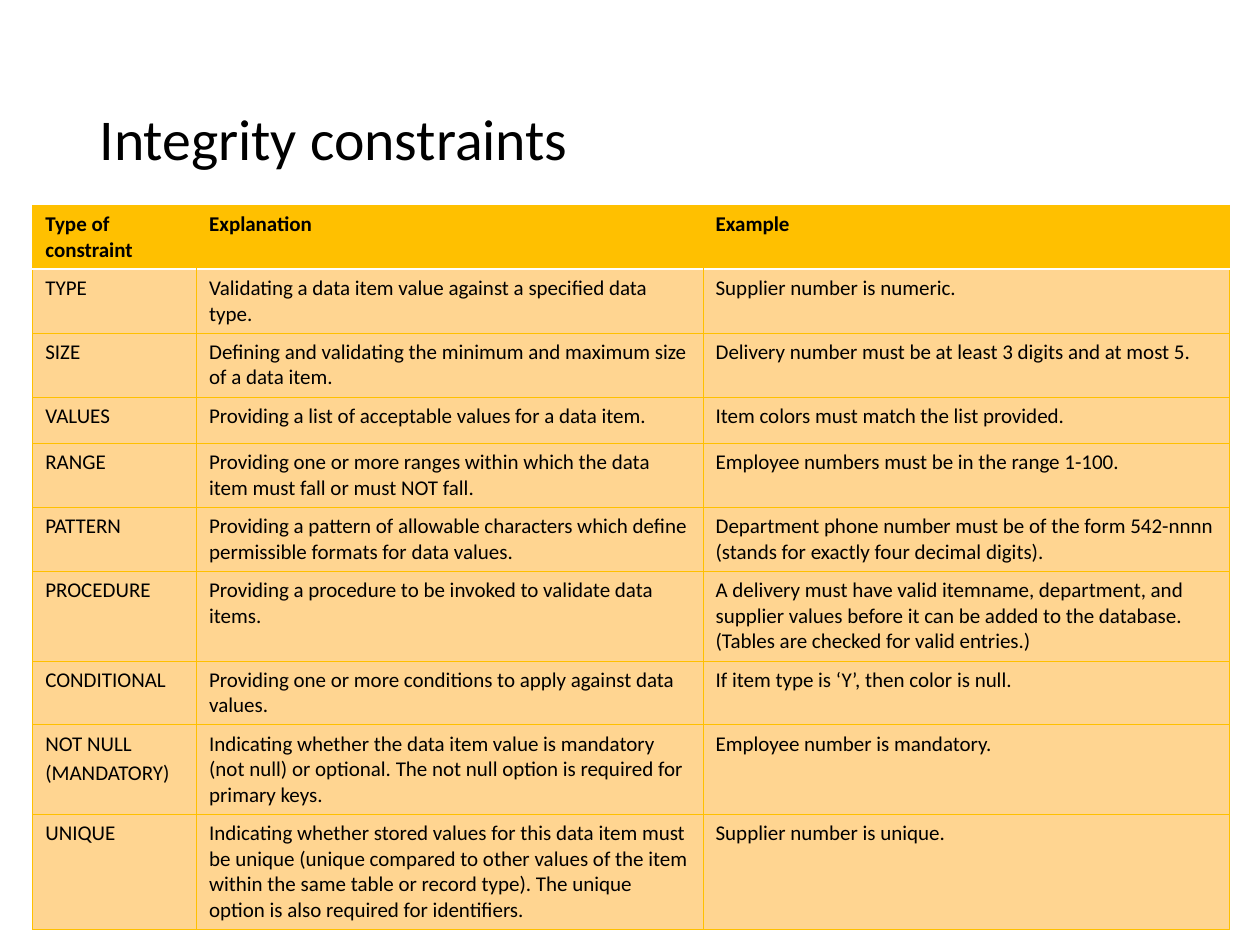
from lxml import etree
from pptx import Presentation, util as u
from pptx.dml.color import RGBColor
from pptx.enum import text
from pptx.oxml import ns

GOLD = RGBColor(0xFF, 0xC0, 0x00)
PEACH = RGBColor(0xFF, 0xD5, 0x91)
WHITE = RGBColor(0xFF, 0xFF, 0xFF)
BLACK = RGBColor(0, 0, 0)
FONT = "Calibri"

COLUMNS = [1.30, 4.02, 4.18]
ROWS = [0.48, 0.30, 0.44, 0.37, 0.44, 0.51, 0.64, 0.48, 0.60, 0.77]
CONSTRAINTS = [
    ("Type of constraint", "Explanation", "Example"),
    ("TYPE", "Validating a data item value against a specified data type.",
     "Supplier number is numeric."),
    ("SIZE", "Defining and validating the minimum and maximum size of a data item.",
     "Delivery number must be at least 3 digits and at most 5."),
    ("VALUES", "Providing a list of acceptable values for a data item.",
     "Item colors must match the list provided."),
    ("RANGE", "Providing one or more ranges within which the data item must fall "
     "or must NOT fall.",
     "Employee numbers must be in the range 1-100."),
    ("PATTERN", "Providing a pattern of allowable characters which define "
     "permissible formats for data values.",
     "Department phone number must be of the form 542-nnnn "
     "(stands for exactly four decimal digits)."),
    ("PROCEDURE", "Providing a procedure to be invoked to validate data items.",
     "A delivery must have valid itemname, department, and supplier values before "
     "it can be added to the database. (Tables are checked for valid entries.)"),
    ("CONDITIONAL", "Providing one or more conditions to apply against data values.",
     "If item type is ‘Y’, then color is null."),
    ("NOT NULL\n(MANDATORY)", "Indicating whether the data item value is mandatory "
     "(not null) or optional. The not null option is required for primary keys.",
     "Employee number is mandatory."),
    ("UNIQUE", "Indicating whether stored values for this data item must be unique "
     "(unique compared to other values of the item within the same table or record "
     "type). The unique option is also required for identifiers.",
     "Supplier number is unique."),
]


def format_para(para, size, bold=False):
    for span in para.runs:
        font = span.font
        font.name, font.size, font.bold = FONT, u.Pt(size), bold
        font.color.rgb = BLACK


def set_border(cell, side, color, width):
    """Draw one cell edge; no color means no line."""
    properties = cell._tc.get_or_add_tcPr()
    line = etree.SubElement(properties, ns.qn("a:ln" + side), w=str(u.Pt(width)))
    if color is None:
        etree.SubElement(line, ns.qn("a:noFill"))
    else:
        fill = etree.SubElement(line, ns.qn("a:solidFill"))
        etree.SubElement(fill, ns.qn("a:srgbClr"), val=str(color))


def format_cell(cell, row, column):
    header = row == 0
    last = len(COLUMNS) - 1
    # Edges come before the fill in the cell properties
    rule = (WHITE, 1)
    gold = (GOLD, 0.5)
    blank = (None, 0.5)
    set_border(cell, "L", *(blank if header and column > 0 else gold))
    set_border(cell, "R", *(blank if header and column < last else gold))
    set_border(cell, "T", *(rule if row == 1 else gold))
    set_border(cell, "B", *(rule if header else gold))
    cell.fill.solid()
    cell.fill.fore_color.rgb = GOLD if header else PEACH
    for para in cell.text_frame.paragraphs:
        para.space_before = u.Pt(2.4)
        format_para(para, 12, bold=header)


def place_title(page, left, top, width, height):
    title = page.shapes.title
    title.left, title.top, title.width, title.height = left, top, width, height
    frame = title.text_frame
    frame.text = "Integrity constraints"
    frame.vertical_anchor = text.MSO_ANCHOR.MIDDLE
    frame.word_wrap = True
    para = frame.paragraphs[0]
    para.alignment = text.PP_ALIGN.LEFT
    para.line_spacing = 0.9
    format_para(para, 33)


def place_table(page, left, top, width, height):
    table = page.shapes.add_table(len(ROWS), len(COLUMNS),
                                  left, top, width, height).table
    table.horz_banding = False
    for column, share in zip(table.columns, COLUMNS):
        column.width = int(width * share / sum(COLUMNS))
    for row, size in zip(table.rows, ROWS):
        row.height = u.Inches(size)
    for row, entries in enumerate(CONSTRAINTS):
        for column, entry in enumerate(entries):
            cell = table.cell(row, column)
            cell.text_frame.text = entry
            format_cell(cell, row, column)


def main():
    deck = Presentation()
    deck.slide_width, deck.slide_height = u.Inches(10), u.Inches(7.5)
    page = deck.slides.add_slide(deck.slide_layouts[5])
    page.background.fill.solid()
    page.background.fill.fore_color.rgb = WHITE
    place_title(page, *map(u.Inches, (0.69, 0.4, 8.62, 1.45)))
    place_table(page, *map(u.Inches, (0.26, 1.63, sum(COLUMNS), sum(ROWS))))
    deck.save("out.pptx")


if __name__ == "__main__":
    main()
